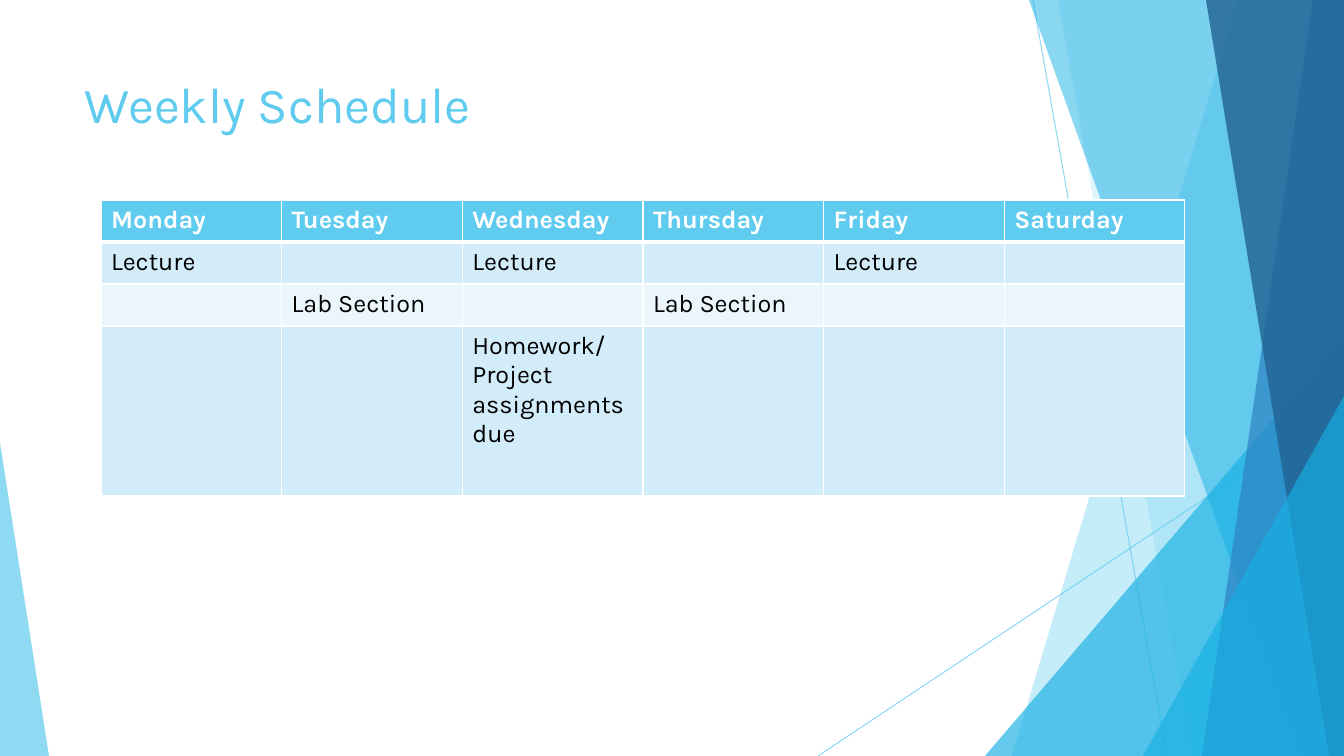
from dataclasses import dataclass

from lxml.etree import SubElement
from pptx import Presentation
from pptx.dml.color import RGBColor as RGB
from pptx.enum.shapes import MSO_CONNECTOR as CONN, MSO_SHAPE as SHAPE
from pptx.oxml.ns import qn
from pptx.util import Pt


@dataclass(frozen=True)
class Theme:
    """Colours, font and sizes of the slide."""
    sky: str = "5FCBEF"
    cyan: str = "17B0E4"
    blue: str = "2E83C3"
    navy: str = "226292"
    band: str = "D2ECF9"
    pale: str = "EAF6FC"
    white: str = "FFFFFF"
    black: str = "000000"
    font: str = "Karla"
    title: int = 36
    cell: int = 18


T = Theme()
SCALE = 914400 / 100.8
DAYS = ["Monday", "Tuesday", "Wednesday", "Thursday", "Friday", "Saturday"]
EVENTS = [
    {"Monday": "Lecture", "Wednesday": "Lecture", "Friday": "Lecture"},
    {"Tuesday": "Lab Section", "Thursday": "Lab Section"},
    {"Wednesday": "Homework/ Project assignments due"},
]
ROW_HEIGHTS = [42, 42, 42, 170]


def px(n):
    """Turn px into EMU."""
    return round(n * SCALE)


def set_alpha(s, percent):
    """Make the solid colour of a shape or line see-through."""
    clr = next(s._element.spPr.iter(qn("a:srgbClr")))
    SubElement(clr, qn("a:alpha"), val=str(percent * 1000))


def paint(s, color, percent):
    """Give a shape a see-through fill and no outline or shadow."""
    s.shadow.inherit = False
    s.fill.solid()
    s.fill.fore_color.rgb = RGB.from_string(color)
    set_alpha(s, percent)
    s.line.fill.background()


def style(p, size, color, bold=False):
    """Set the font of a paragraph."""
    p.font.name, p.font.size, p.font.bold = T.font, Pt(size), bold
    p.font.color.rgb = RGB.from_string(color)


def add_ray(slide, x1, y1, x2, y2):
    """Draw one thin line."""
    s = slide.shapes.add_connector(CONN.STRAIGHT, px(x1), px(y1), px(x2), px(y2))
    s.line.color.rgb = RGB.from_string(T.sky)
    s.line.width = Pt(0.75)
    set_alpha(s, 70)
    SubElement(s._element.spPr, qn("a:effectLst"))


def add_facet(slide, box, top_x, bottom_x, color, percent):
    """Draw a facet from a slanted left edge to the right side of the box."""
    x, y, w, h = box
    right, bottom = px(x + w), px(y + h)
    fb = slide.shapes.build_freeform(px(x + top_x), px(y))
    fb.add_line_segments([(right, px(y)), (right, bottom), (px(x + bottom_x), bottom)])
    paint(fb.convert_to_shape(), color, percent)


def add_wedge(slide, box, apex, color, percent):
    """Draw a triangle that fills the box, with its apex at 0 left to 1 right."""
    s = slide.shapes.add_shape(SHAPE.ISOSCELES_TRIANGLE, *map(px, box))
    s.adjustments[0] = apex
    paint(s, color, percent)


def add_backdrop(slide, box):
    """Place the rays, facets and wedges."""
    x, y, w, h = box
    right, bottom = x + w, y + h
    add_ray(slide, x + 1033, y, x + 1167, bottom)
    add_ray(slide, right, y + 406, x + 818, bottom)
    add_facet(slide, box, 1238, 1012, T.sky, 36)
    add_facet(slide, box, 1058, 1192, T.sky, 20)
    add_wedge(slide, (right - 359, bottom - 420, 359, 420), 1, T.cyan, 66)
    add_facet(slide, box, 1029, 1301, T.cyan, 50)
    add_facet(slide, box, 1313, 1202, T.blue, 70)
    add_facet(slide, box, 1206, 1329, T.navy, 80)
    add_wedge(slide, (right - 201, bottom - 360, 201, 360), 1, T.cyan, 66)
    add_wedge(slide, (x, bottom - 313, 49, 313), 0, T.sky, 70)


def add_title(slide, box, text):
    """Place the slide title."""
    tf = slide.shapes.add_textbox(*map(px, box)).text_frame
    tf.word_wrap = True
    tf.text = text
    style(tf.paragraphs[0], T.title, T.sky)


def set_borders(cell, top, bottom):
    """Draw white cell borders, 1 pt wide at the sides."""
    tc_pr = cell._tc.get_or_add_tcPr()
    for side, width in zip("LRTB", (1, 1, top, bottom)):
        ln = SubElement(tc_pr, qn(f"a:ln{side}"), w=str(Pt(width)))
        fill = SubElement(ln, qn("a:solidFill"))
        SubElement(fill, qn("a:srgbClr"), val=T.white)


def add_schedule(slide, box):
    """Place the table of the week."""
    rows = [DAYS] + [[events.get(day, "") for day in DAYS] for events in EVENTS]
    table = slide.shapes.add_table(len(rows), len(DAYS), *map(px, box)).table
    table.first_row = table.horz_banding = False
    for i, (texts, height) in enumerate(zip(rows, ROW_HEIGHTS)):
        header = i == 0
        table.rows[i].height = px(height)
        fill = T.sky if header else T.band if i % 2 else T.pale
        for j, text in enumerate(texts):
            cell = table.cell(i, j)
            set_borders(cell, 3 if i == 1 else 1, 3 if header else 1)
            cell.fill.solid()
            cell.fill.fore_color.rgb = RGB.from_string(fill)
            cell.text = text
            color = T.white if header else T.black
            style(cell.text_frame.paragraphs[0], T.cell, color, header)


def main():
    """Build and save the slide."""
    prs = Presentation()
    prs.slide_width, prs.slide_height = px(1344), px(756)
    slide = prs.slides.add_slide(prs.slide_layouts[6])
    add_backdrop(slide, (0, 0, 1344, 756))
    add_title(slide, (75, 68, 948, 145), "Weekly Schedule")
    add_schedule(slide, (101, 200, 1084, sum(ROW_HEIGHTS)))
    prs.save("out.pptx")


if __name__ == "__main__":
    main()
